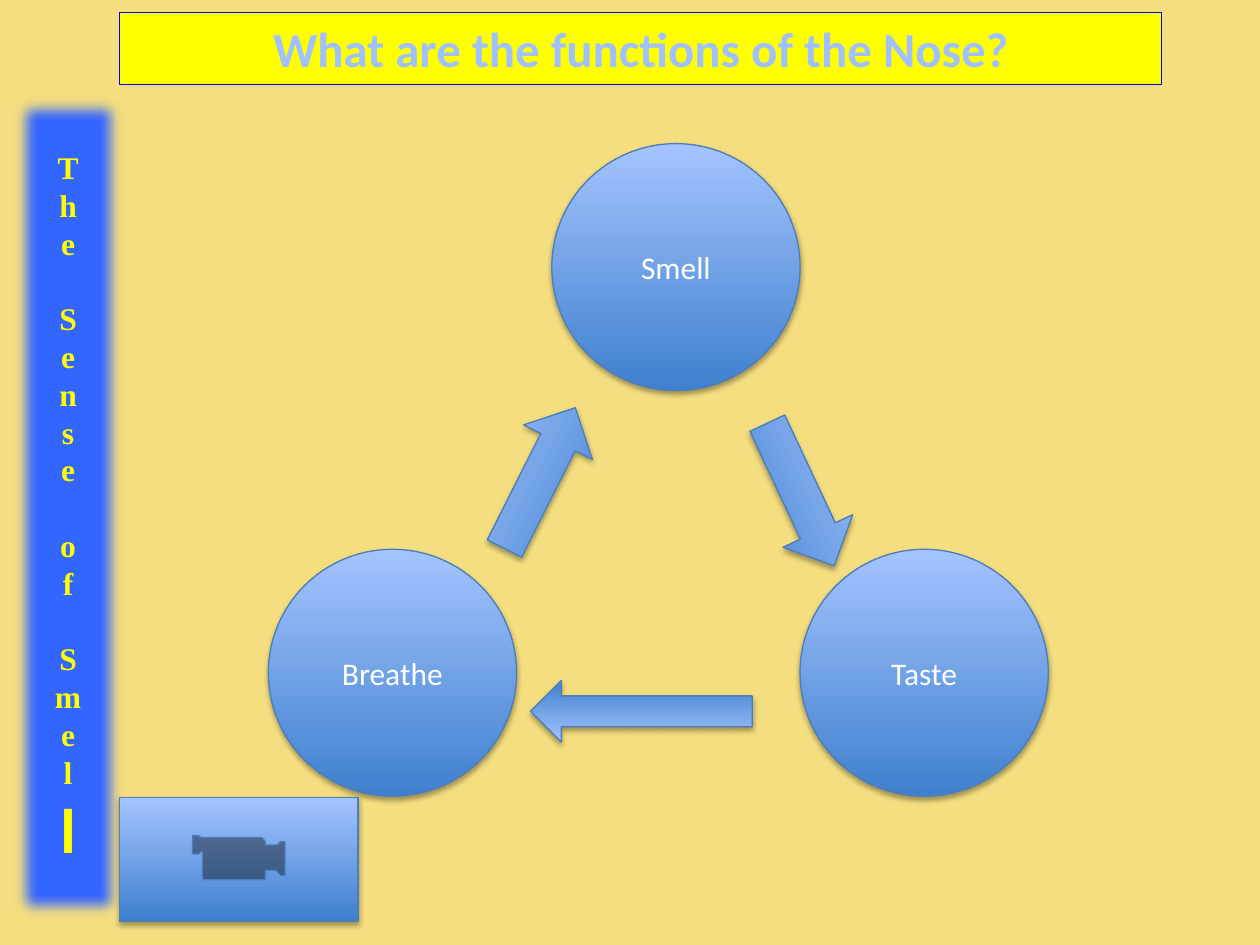
from dataclasses import dataclass

from lxml import etree
from pptx import Presentation
from pptx.dml.color import RGBColor
from pptx.enum.shapes import MSO_SHAPE as Kind
from pptx.enum.text import MSO_ANCHOR as Anchor, MSO_AUTO_SIZE as Auto, PP_ALIGN as Align
from pptx.oxml import parse_xml
from pptx.util import Inches, Pt

NS = "http://schemas.openxmlformats.org/drawingml/2006/main"
COLS, ROWS = 100, 75
CELL = Inches(0.1)


@dataclass
class Box:
    """A place on the grid, in columns and rows."""
    col: float
    row: float
    wide: float
    high: float


@dataclass
class Item:
    """A blue shape of the cycle."""
    kind: Kind
    box: Box
    text: str = ""
    turn: float = 0


def tint(code: str) -> RGBColor:
    return RGBColor.from_string(code)


def node(xml: str) -> etree._Element:
    """Parse one drawing element, adding its namespace."""
    tag, rest = xml.split(" ", 1)
    return parse_xml(f'{tag} xmlns:a="{NS}" {rest}')


def place(slide, kind: Kind, box: Box, edge: str, width: float):
    spots = (round(n * CELL) for n in (box.col, box.row, box.wide, box.high))
    shape = slide.shapes.add_shape(kind, *spots)
    shape.shadow.inherit = False
    shape.line.color.rgb = tint(edge)
    shape.line.width = Pt(width)
    return shape


def effect(shape, xml: str) -> None:
    shape._element.spPr.find(f"{{{NS}}}effectLst").append(node(xml))


def style(run, size: float, face: str, color: str, bold: bool = False) -> None:
    font = run.font
    font.size, font.name, font.bold = Pt(size), face, bold
    font.color.rgb = tint(color)


def outline(run, color: str, width: float) -> None:
    run.font._element.insert(0, node(
        f'<a:ln w="{Pt(width)}"><a:solidFill><a:srgbClr val="{color}"/></a:solidFill></a:ln>'))


def panel(slide, box: Box, fill: str, edge: str, width: float, parts: list):
    """A flat box whose height follows its text."""
    shape = place(slide, Kind.RECTANGLE, box, edge, width)
    shape.fill.solid()
    shape.fill.fore_color.rgb = tint(fill)
    frame = shape.text_frame
    frame.word_wrap, frame.auto_size = True, Auto.SHAPE_TO_FIT_TEXT
    frame.vertical_anchor = Anchor.TOP
    line = frame.paragraphs[0]
    line.alignment = Align.CENTER
    for part in parts:
        line.add_run().text = part
    return shape, line.runs


def draw(slide, item: Item) -> None:
    shape = place(slide, item.kind, item.box, "4B7EBC", 0.75)
    shape.rotation = item.turn
    shape.fill.gradient()
    shape.fill.gradient_angle = 90
    for stop, code in zip(shape.fill.gradient_stops, ("3F80CE", "A4C4FF")):
        stop.color.rgb = tint(code)
    effect(shape, '<a:outerShdw blurRad="40000" dist="23000" dir="5400000" rotWithShape="0">'
                  '<a:srgbClr val="000000"><a:alpha val="35000"/></a:srgbClr></a:outerShdw>')
    if item.text:
        frame = shape.text_frame
        frame.text = item.text
        frame.vertical_anchor = Anchor.MIDDLE
        frame.paragraphs[0].alignment = Align.CENTER
        style(frame.paragraphs[0].runs[0], 18, "Calibri", "FFFFFF")


def title(slide) -> None:
    _, (run,) = panel(slide, Box(9.5, 1, 82.7, 5.7), "FFFF00", "0000FF", 0.75,
                      ["What are the functions of the Nose?"])
    style(run, 28, "Calibri", "A0C1FF", True)
    # Gradient letters
    stops = "".join(
        f'<a:gs pos="{at * 1000}"><a:srgbClr val="{code}"/></a:gs>'
        for at, code in ((0, "BFD3F9"), (9, "A0C1FF"), (50, "003D85"),
                         (79, "A0C1FF"), (100, "BFD3F9")))
    props = run.font._element
    props.replace(props.find(f"{{{NS}}}solidFill"), node(
        f'<a:gradFill rotWithShape="1"><a:gsLst>{stops}</a:gsLst>'
        '<a:lin ang="5400000" scaled="0"/></a:gradFill>'))
    outline(run, "467AB8", 0.83)


def banner(slide) -> None:
    shape, runs = panel(slide, Box(0.8, 7.4, 9.2, 65.7), "3366FF", "FF0000", 3,
                        ["The Sense of Smel", "l"])
    shape.text_frame._txBody.bodyPr.set("vert", "wordArtVert")
    effect(shape, '<a:softEdge rad="112500"/>')
    for run, size, face in zip(runs, (18, 36), ("Times New Roman", "Calibri")):
        style(run, size, face, "FFFF00", True)
        outline(run, "054697", 1)


def disc(text: str, col: float, row: float) -> Item:
    return Item(Kind.OVAL, Box(col, row, 19.7, 19.6), text)


def arrow(turn: float, *spot: float) -> Item:
    return Item(Kind.RIGHT_ARROW, Box(*spot), turn=turn)


def main() -> None:
    deck = Presentation()
    deck.slide_width, deck.slide_height = COLS * CELL, ROWS * CELL
    slide = deck.slides.add_slide(deck.slide_layouts[6])
    back = slide.background.fill
    back.solid()
    back.fore_color.rgb = tint("F4DE80")

    title(slide)

    # Cycle of functions
    cycle = [
        disc("Smell", 43.8, 11.4),
        disc("Breathe", 21.3, 43.6),
        disc("Taste", 63.5, 43.6),
        arrow(64.9, 57.3, 36.2, 12.5, 6.1),
        arrow(180, 42.1, 54, 17.6, 4.9),
        arrow(296.7, 36.6, 34.9, 12.5, 6.1),
    ]
    for item in cycle:
        draw(slide, item)

    # Side banner and movie button
    banner(slide)
    draw(slide, Item(Kind.ACTION_BUTTON_MOVIE, Box(9.5, 63.3, 18.9, 9.8)))

    deck.save("out.pptx")


if __name__ == "__main__":
    main()
